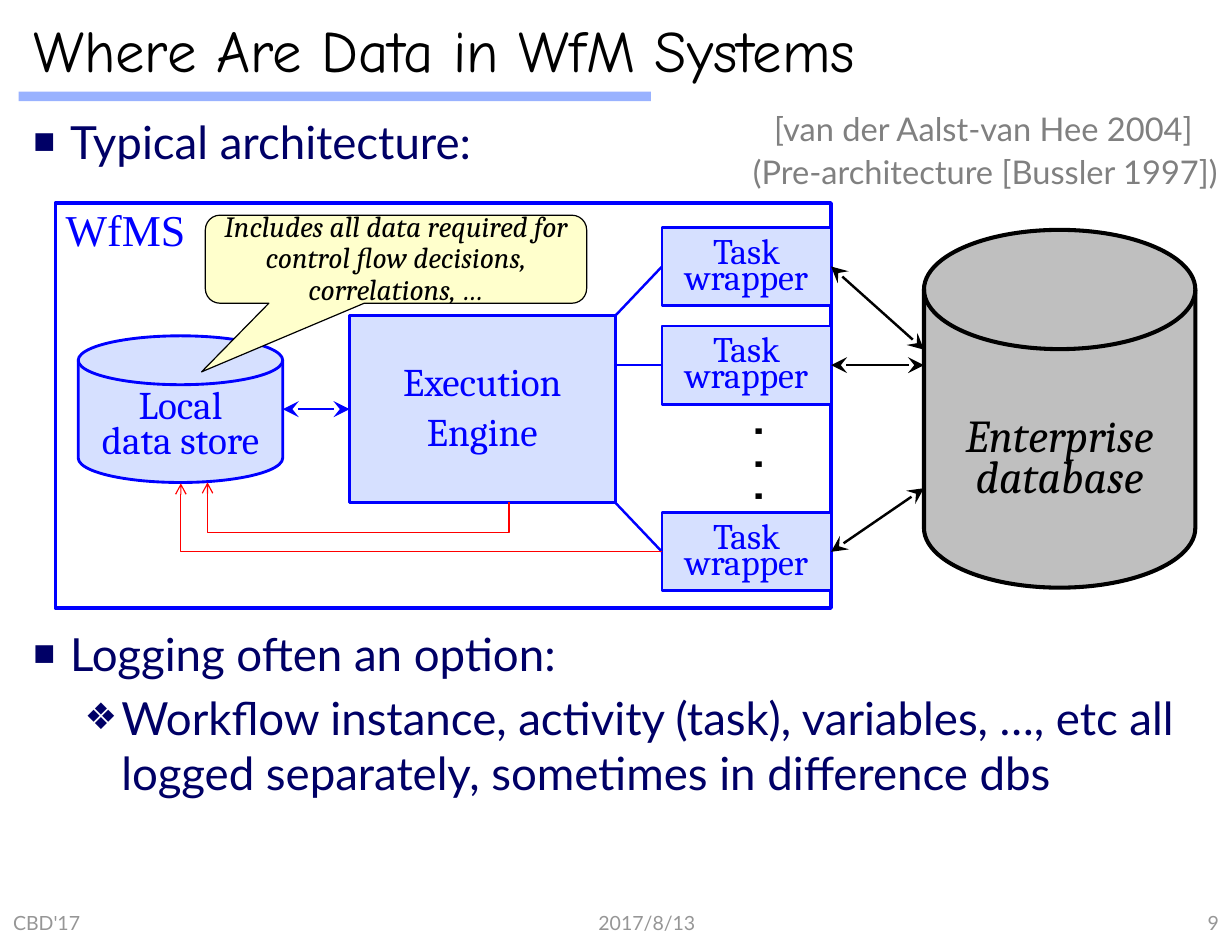
from lxml import etree
from pptx import Presentation
from pptx.dml.color import RGBColor
from pptx.enum.shapes import MSO_CONNECTOR, MSO_SHAPE
from pptx.enum.text import MSO_ANCHOR, PP_ALIGN
from pptx.oxml.ns import qn
from pptx.util import Pt

RECTANGLE = MSO_SHAPE.RECTANGLE
DISK = MSO_SHAPE.FLOWCHART_MAGNETIC_DISK
CALLOUT = MSO_SHAPE.ROUNDED_RECTANGULAR_CALLOUT
STRAIGHT, ELBOW = MSO_CONNECTOR.STRAIGHT, MSO_CONNECTOR.ELBOW
TOP, MIDDLE = MSO_ANCHOR.TOP, MSO_ANCHOR.MIDDLE
LEFT, CENTER, RIGHT = PP_ALIGN.LEFT, PP_ALIGN.CENTER, PP_ALIGN.RIGHT

BLACK = RGBColor(0x00, 0x00, 0x00)
BLUE = RGBColor(0x00, 0x00, 0xFF)
RED = RGBColor(0xFF, 0x00, 0x00)
NAVY = RGBColor(0x00, 0x00, 0x66)
PALE_BLUE = RGBColor(0xD6, 0xE0, 0xFF)
RULE_BLUE = RGBColor(0x99, 0xB2, 0xFF)
YELLOW = RGBColor(0xFF, 0xFF, 0xCC)
SILVER = RGBColor(0xBF, 0xBF, 0xBF)
GRAY = RGBColor(0x80, 0x80, 0x80)
FOOTER_GRAY = RGBColor(0x96, 0x96, 0x96)

LEFT_SIDE, RIGHT_SIDE = 1, 3


def write(shape, lines, size, font, color, align=LEFT, anchor=TOP, margins=(7.2, 3.6, 7.2, 3.6),
          wrap=True, spacing=None, italic=False):
    frame = shape.text_frame
    frame.word_wrap = wrap
    frame.vertical_anchor = anchor
    frame.margin_left, frame.margin_top, frame.margin_right, frame.margin_bottom = map(Pt, margins)
    for index, line in enumerate(lines):
        paragraph = frame.paragraphs[0] if index == 0 else frame.add_paragraph()
        paragraph.text = line
        paragraph.alignment = align
        if spacing:
            paragraph.line_spacing = spacing
            paragraph.space_before = Pt(size * 0.2)
        paragraph.font.size = Pt(size)
        paragraph.font.name = font
        paragraph.font.italic = italic
        paragraph.font.color.rgb = color


def add_text(slide, box, *args, **options):
    shape = slide.shapes.add_textbox(*map(Pt, box))
    write(shape, *args, **options)
    return shape


def add_box(slide, kind, box, fill, line, width=1.75):
    shape = slide.shapes.add_shape(kind, *map(Pt, box))
    shape.shadow.inherit = False
    if fill is None:
        shape.fill.background()
    else:
        shape.fill.solid()
        shape.fill.fore_color.rgb = fill
    if line is None:
        shape.line.fill.background()
    else:
        shape.line.color.rgb = line
        shape.line.width = Pt(width)
    return shape


def add_line(slide, kind, start, end, color, width=1.5):
    connector = slide.shapes.add_connector(kind, *map(Pt, (*start, *end)))
    connector.line.color.rgb = color
    connector.line.width = Pt(width)
    etree.SubElement(connector._element.spPr, qn("a:effectLst"))
    return connector


def add_arrowheads(connector, arrow, size, *tags):
    outline = connector.line._get_or_add_ln()
    for tag in tags:
        etree.SubElement(outline, qn(tag), type=arrow, w=size, len=size)


def add_double_arrow(slide, start, end, color):
    connector = add_line(slide, STRAIGHT, start, end, color)
    add_arrowheads(connector, "stealth", "lg", "a:headEnd", "a:tailEnd")
    return connector


def add_feedback(slide, box, preset, rotation, flip=False, bend=None):
    left, top, width, height = box
    connector = add_line(slide, ELBOW, (left, top), (left + width, top + height), RED, 0.75)
    add_arrowheads(connector, "arrow", "med", "a:tailEnd")
    properties = connector._element.spPr
    properties.xfrm.set("rot", str(rotation * 60000))
    if flip:
        properties.xfrm.set("flipH", "1")
    geometry = properties.find(qn("a:prstGeom"))
    geometry.set("prst", preset)
    if bend is not None:
        etree.SubElement(geometry.find(qn("a:avLst")), qn("a:gd"), name="adj1", fmla=f"val {bend}")


def add_bullet(paragraph, character, indent):
    properties = paragraph._p.get_or_add_pPr()
    properties.set("marL", str(Pt(indent)))
    properties.set("indent", str(Pt(-22.5)))
    color = etree.SubElement(properties, qn("a:buClr"))
    etree.SubElement(color, qn("a:srgbClr"), val=str(NAVY))
    etree.SubElement(properties, qn("a:buSzPct"), val="80000")
    etree.SubElement(properties, qn("a:buFont"), typeface="Arial")
    etree.SubElement(properties, qn("a:buChar"), char=character)


def add_body(slide):
    lines = ["Typical architecture:", "Logging often an option:",
             "Workflow instance, activity (task), variables, …, etc all logged separately, "
             "sometimes in difference dbs"]
    body = add_text(slide, (12.5, 66.25, 731, 486), lines, 28, "Lato", NAVY, margins=(8, 3.6, 8, 3.6))
    levels = [("■", 22.5, 5.6), ("■", 22.5, 280.5), ("❖", 54, 5.6)]
    for paragraph, (character, indent, gap) in zip(body.text_frame.paragraphs, levels):
        paragraph.space_before = Pt(gap)
        add_bullet(paragraph, character, indent)


def add_architecture(slide):
    add_box(slide, RECTANGLE, (34, 124.5, 476, 248.5), None, BLUE, 2.25)
    engine = add_box(slide, RECTANGLE, (214.5, 193.75, 163, 114.5), PALE_BLUE, BLUE)
    write(engine, ["Execution", "Engine"], 24, "Cambria", BLUE, CENTER, MIDDLE, spacing=0.9)
    store = add_box(slide, DISK, (48, 206, 125.5, 90), PALE_BLUE, BLUE)
    write(store, ["Local\vdata store"], 24, "Cambria", BLUE, CENTER, MIDDLE, (0, 6.5, 0, 0), spacing=0.75)
    database = add_box(slide, DISK, (567, 141, 166.5, 219.5), SILVER, BLACK, 2.5)
    write(database, ["Enterprise\vdatabase"], 28, "Cambria", BLACK, CENTER, TOP, (7.2, 43, 7.2, 3.6),
          wrap=False, spacing=0.75, italic=True)

    links = [(139.5, 193.75, 214.5), (200, 224, 224), (314.5, 308.25, 299.5)]
    for top, engine_y, database_y in links:
        wrapper = add_box(slide, RECTANGLE, (406.25, top, 103.75, 48), PALE_BLUE, BLUE)
        write(wrapper, ["Task\vwrapper"], 22, "Cambria", BLUE, CENTER, MIDDLE, (0, 3.6, 0, 0),
              wrap=False, spacing=0.6)
        middle = top + 24
        link = add_line(slide, STRAIGHT, (377.5, engine_y), (406.25, middle), BLUE)
        link.end_connect(wrapper, LEFT_SIDE)
        access = add_double_arrow(slide, (510, middle), (567, database_y), BLACK)
        access.begin_connect(wrapper, RIGHT_SIDE)

    exchange = add_double_arrow(slide, (173.5, 251), (214.5, 251), BLUE)
    exchange.end_connect(engine, LEFT_SIDE)
    add_feedback(slide, (213.75, 209.5, 12.25, 185), "bentConnector3", 90, True, -149400)
    add_feedback(slide, (111, 296.5, 295.5, 42), "bentConnector2", 180)

    dots = add_text(slide, (442, 261.5, 65, 47.5), [". . ."], 36, "Arial", BLACK, wrap=False, spacing=0.9)
    dots.rotation = 90
    add_text(slide, (33.25, 124.5, 88, 37), ["WfMS"], 27, "Times New Roman", BLUE, wrap=False, spacing=0.9)
    callout = add_box(slide, CALLOUT, (126, 132, 234, 54), YELLOW, BLACK, 0.75)
    callout.adjustments[0] = -0.51
    callout.adjustments[1] = 1.28
    write(callout, ["Includes all data required for control flow decisions, correlations, …"],
          18, "Cambria", BLACK, CENTER, MIDDLE, (0, 0, 0, 0), spacing=0.9, italic=True)


def main():
    presentation = Presentation()
    presentation.slide_width, presentation.slide_height = Pt(756), Pt(576)
    slide = presentation.slides.add_slide(presentation.slide_layouts[6])

    add_box(slide, RECTANGLE, (11.5, 56.25, 388, 5.75), RULE_BLUE, None)
    add_text(slide, (12.5, 0, 731, 60), ["Where Are Data in WfM Systems"], 36, "Comic Neue", BLACK,
             anchor=MIDDLE, margins=(8, 3.6, 8, 3.6))
    add_body(slide)
    add_architecture(slide)
    add_text(slide, (468, 66.25, 282, 29), ["[van der Aalst-van Hee 2004]"], 20, "Lato", GRAY, spacing=0.9)
    add_text(slide, (462, 95.75, 292, 24), ["(Pre-architecture [Bussler 1997])"], 20, "Lato", GRAY,
             margins=(0, 0, 0, 0), spacing=0.9)

    footers = [("CBD'17", 0, 240, LEFT), ("2017/8/13", 318.25, 157.5, CENTER), ("9", 598.5, 157.5, RIGHT)]
    for text, left, width, align in footers:
        add_text(slide, (left, 556.5, width, 19.5), [text], 12, "Lato", FOOTER_GRAY, align, MIDDLE,
                 (8, 3.6, 8, 3.6))
    presentation.save("out.pptx")


if __name__ == "__main__":
    main()
